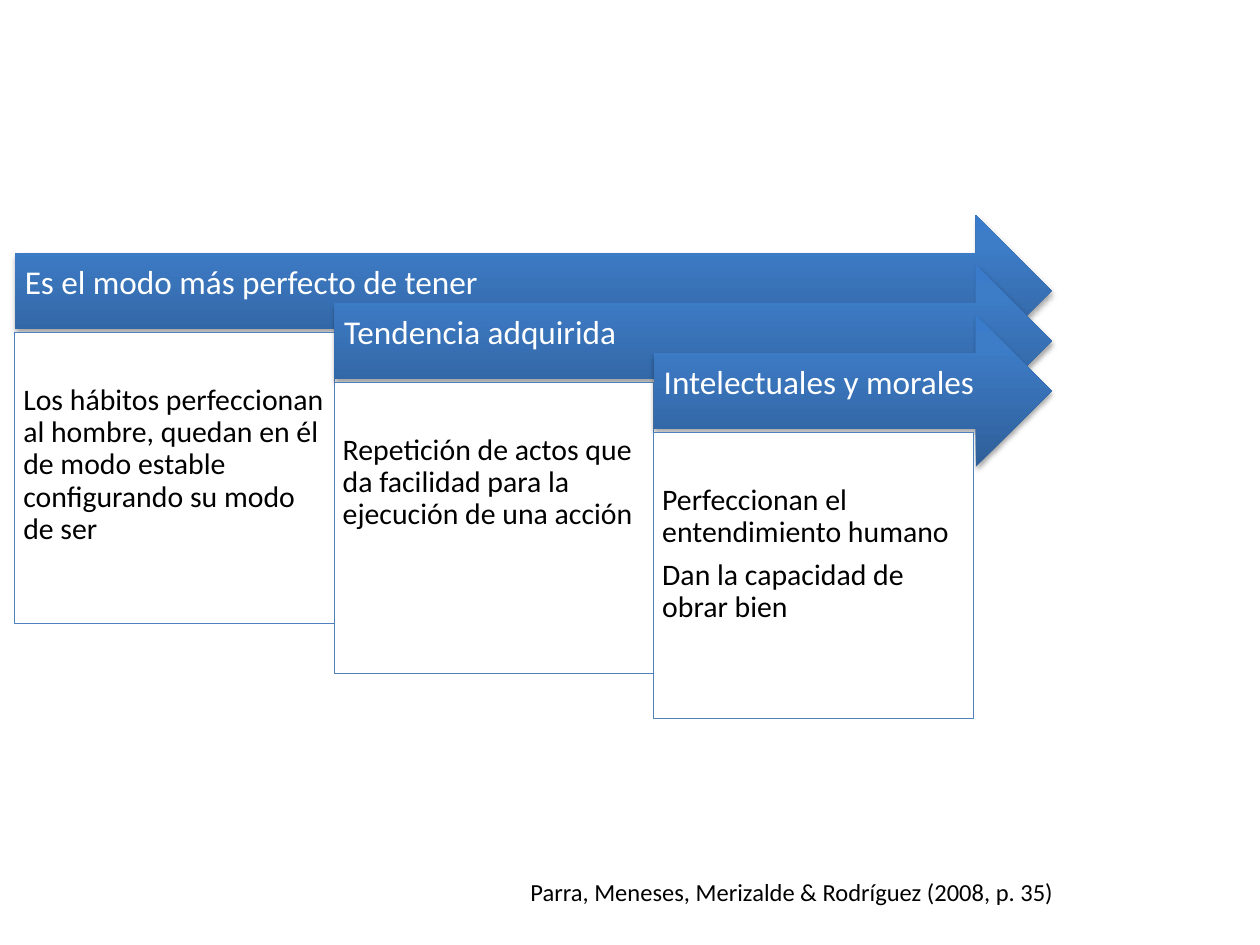
from lxml.etree import SubElement
from pptx import Presentation
from pptx.dml.color import RGBColor
from pptx.enum.shapes import MSO_SHAPE as Shape
from pptx.enum.text import MSO_ANCHOR as Anchor, MSO_AUTO_SIZE as AutoSize, PP_ALIGN as Align
from pptx.oxml.ns import qn
from pptx.util import Cm, Pt

WHITE = RGBColor(0xFF, 0xFF, 0xFF)
BLACK = RGBColor(0x00, 0x00, 0x00)
BORDER = RGBColor(0x4F, 0x81, 0xBD)
ARROW_STOPS = (
    (0, RGBColor(0x2F, 0x5F, 0x99)),
    (80, RGBColor(0x3D, 0x7C, 0xC7)),
    (100, RGBColor(0x3A, 0x7C, 0xCB)),
)

# Each step starts further right and lower; all arrows end at the same edge
LEFT, RIGHT = 0.3, 21.2
ARROW_TOP, ARROW_HEIGHT = 4.34, 3.05
BODY_TOP, BODY_WIDTH = 6.7, 6.44
DROP = 1.01

STEPS = (
    ("Es el modo más perfecto de tener", 5.87,
     ["Los hábitos perfeccionan al hombre, quedan en él de modo estable "
      "configurando su modo de ser"]),
    ("Tendencia adquirida", 5.87,
     ["Repetición de actos que da facilidad para la ejecución de una acción"]),
    ("Intelectuales y morales", 5.77,
     ["Perfeccionan el entendimiento humano", "Dan la capacidad de obrar bien"]),
)
CITATION = "Parra, Meneses, Merizalde & Rodríguez (2008, p. 35)"

ARROW_FRAME = dict(vertical_anchor=Anchor.MIDDLE, margin_left=Cm(0.2), margin_top=Cm(0.2),
                   margin_right=Cm(0.7), margin_bottom=Cm(0.48))
BODY_FRAME = dict(vertical_anchor=Anchor.TOP, margin_left=Cm(0.17), margin_top=Cm(1.06),
                  margin_right=Cm(0.17), margin_bottom=Cm(0.17))
CITATION_FRAME = dict(auto_size=AutoSize.SHAPE_TO_FIT_TEXT)
STEP_PARAGRAPH = dict(alignment=Align.LEFT, line_spacing=0.9, space_after=Pt(6))
CITATION_PARAGRAPH = dict(alignment=Align.RIGHT)


def apply_format(target, values):
    for name, value in values.items():
        setattr(target, name, value)


def write_text(shape, lines, size, color, frame_format, paragraph_format):
    frame = shape.text_frame
    frame.word_wrap = True
    apply_format(frame, frame_format)
    frame.text = "\n".join(lines)
    for paragraph in frame.paragraphs:
        apply_format(paragraph, paragraph_format)
        apply_format(paragraph.font, dict(name="Calibri", size=Pt(size)))
        paragraph.font.color.rgb = color


def add_color(parent, color):
    return SubElement(parent, qn("a:srgbClr"), val=str(color))


def shade_arrow(arrow):
    # Three-stop gradient, dark at the bottom
    arrow.fill.gradient()
    arrow.fill.gradient_angle = 90
    properties = arrow._element.spPr
    stops = properties.find(qn("a:gradFill")).find(qn("a:gsLst"))
    for stop in list(stops):
        stops.remove(stop)
    for position, color in ARROW_STOPS:
        add_color(SubElement(stops, qn("a:gs"), pos=str(position * 1000)), color)
    # Soft shadow straight below
    shadow = SubElement(properties.find(qn("a:effectLst")), qn("a:outerShdw"),
                        blurRad=str(Pt(3.1)), dist=str(Pt(1.8)), dir="5400000", rotWithShape="0")
    SubElement(add_color(shadow, BLACK), qn("a:alpha"), val="35000")


def add_arrow(slide, left, top, heading):
    arrow = slide.shapes.add_shape(Shape.RIGHT_ARROW, Cm(left), Cm(top),
                                   Cm(RIGHT - left), Cm(ARROW_HEIGHT))
    arrow.shadow.inherit = False
    arrow.line.fill.background()
    shade_arrow(arrow)
    write_text(arrow, [heading], 19, WHITE, ARROW_FRAME, STEP_PARAGRAPH)


def add_body(slide, left, top, height, lines):
    body = slide.shapes.add_shape(Shape.RECTANGLE, Cm(left), Cm(top), Cm(BODY_WIDTH), Cm(height))
    body.shadow.inherit = False
    body.fill.solid()
    body.fill.fore_color.rgb = WHITE
    body.line.color.rgb = BORDER
    body.line.width = Pt(0.75)
    write_text(body, lines, 17, BLACK, BODY_FRAME, STEP_PARAGRAPH)


def add_citation(slide):
    citation = slide.shapes.add_textbox(Cm(7.29), Cm(17.55), Cm(14.2), Cm(0.86))
    write_text(citation, [CITATION], 14, BLACK, CITATION_FRAME, CITATION_PARAGRAPH)


def main():
    deck = Presentation()
    deck.slide_width, deck.slide_height = Cm(25.4), Cm(19.05)
    slide = deck.slides.add_slide(deck.slide_layouts[6])

    # Cascading steps
    for index, (heading, body_height, lines) in enumerate(STEPS):
        left, drop = LEFT + index * BODY_WIDTH, index * DROP
        add_arrow(slide, left, ARROW_TOP + drop, heading)
        add_body(slide, left, BODY_TOP + drop, body_height, lines)

    add_citation(slide)
    deck.save("out.pptx")


if __name__ == "__main__":
    main()
